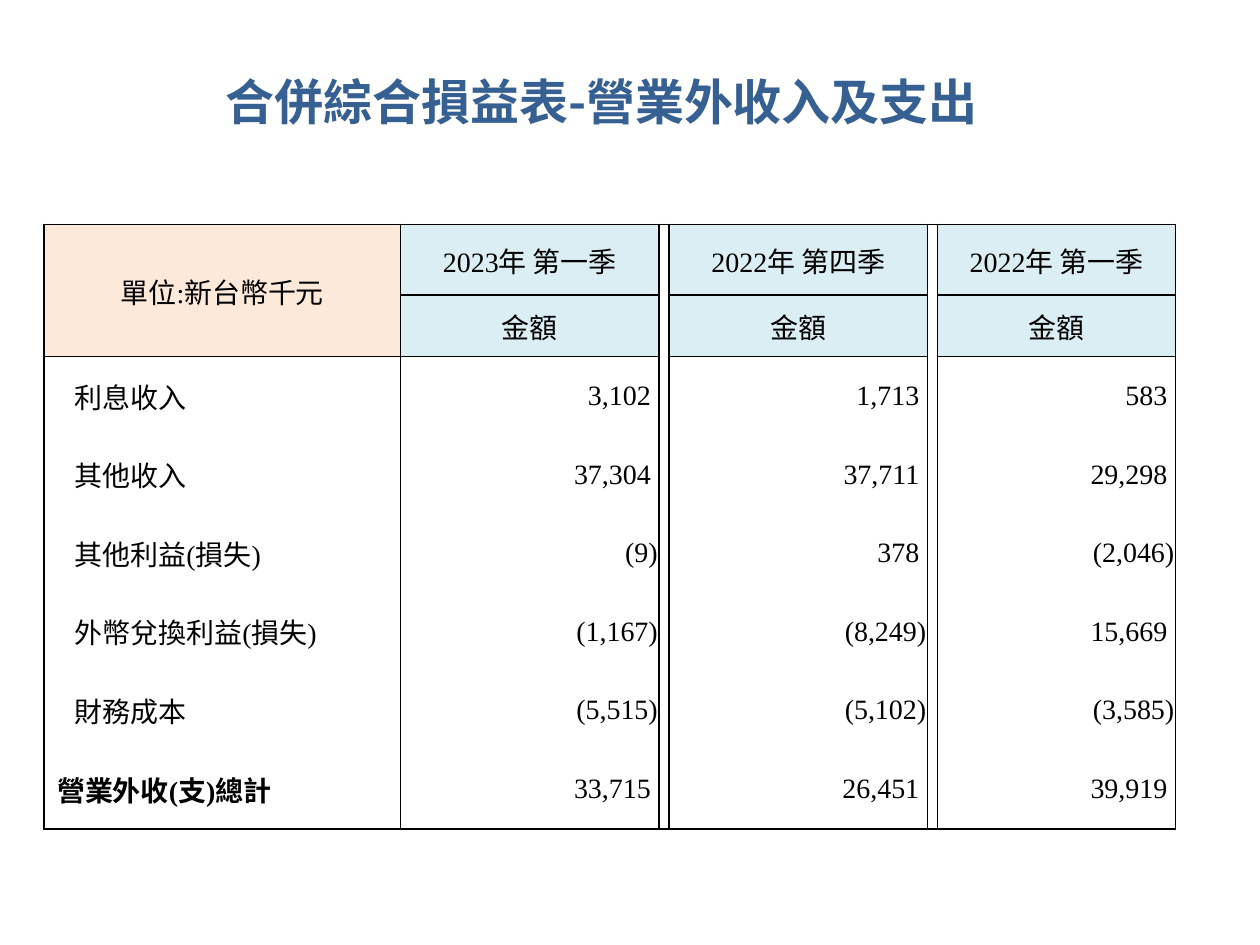
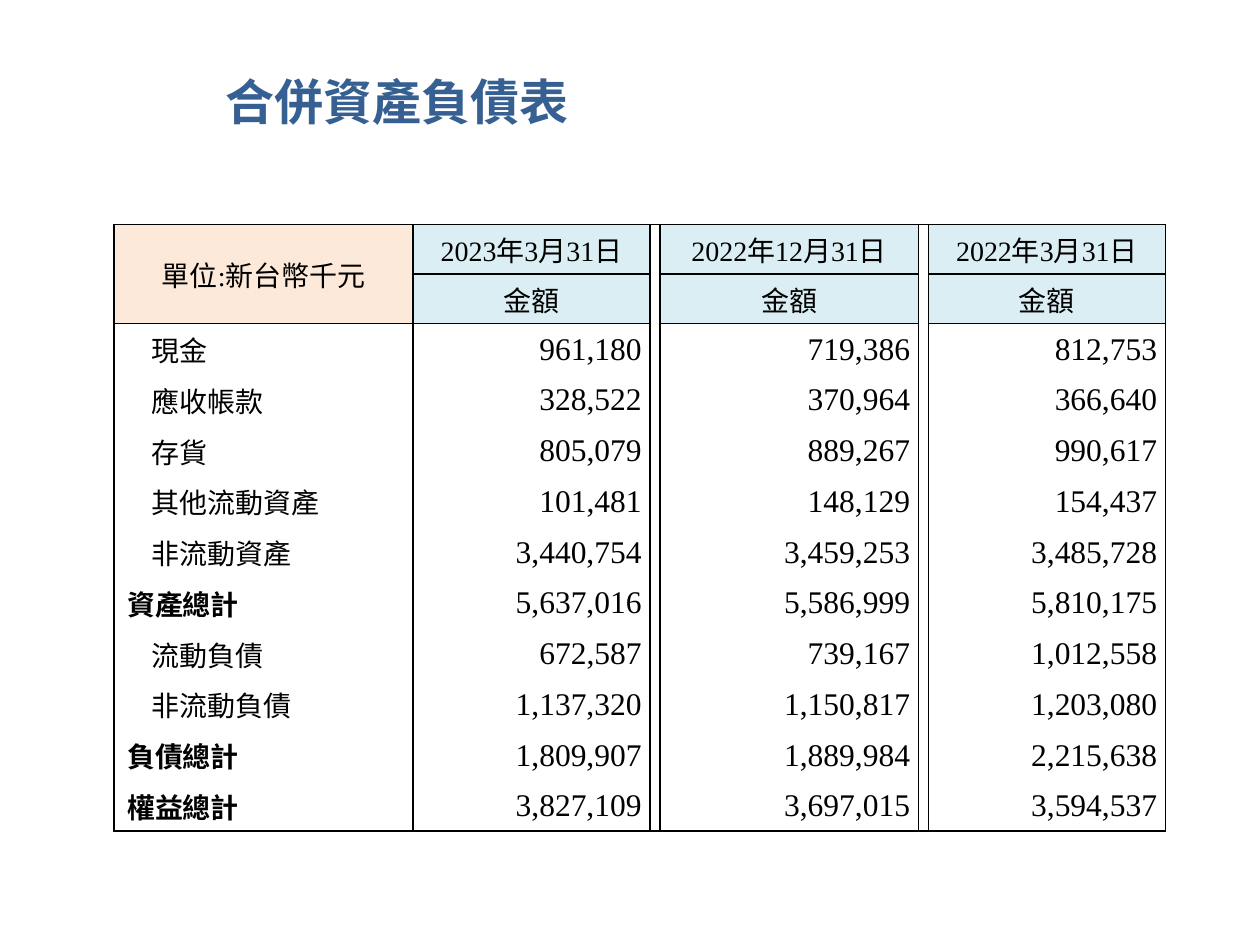
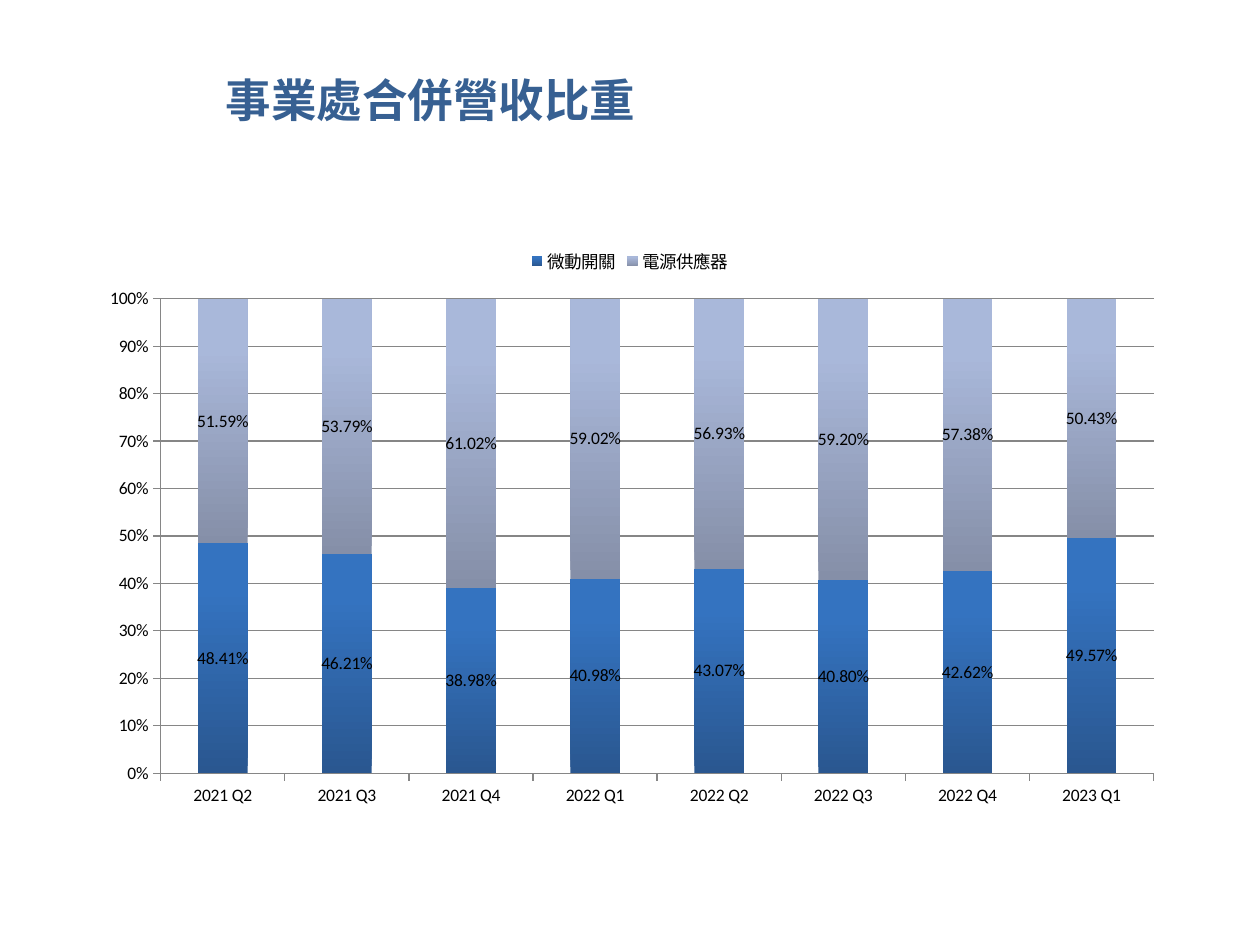
from lxml.etree import SubElement as Sub
from pptx import Presentation
from pptx.chart.data import CategoryChartData as Data
from pptx.dml.color import RGBColor as RGB
from pptx.enum.chart import XL_CHART_TYPE as Kind, XL_LEGEND_POSITION as Spot
from pptx.enum.text import MSO_ANCHOR as Anchor, MSO_AUTO_SIZE as Auto, PP_ALIGN as Align
from pptx.oxml.ns import qn
from pptx.util import Pt

HUES = {
    "title": "376092", "text": "000000", "unit": "FDE9D9", "head": "DBEEF3",
    "grid": "868686",
}
BARS = [("2A5790", "3473C0"), ("858FA8", "A9B8DA")]
CJK = "Noto Sans CJK SC"
SERIF = "Times New Roman"
UNIT = "單位:新台幣千元"
AMOUNT = "金額"
GAP = 5.8
INSET = 0.72
SPACE = 4.72
TOP = 128.2


def put(item, **vals):
    for key, val in vals.items():
        setattr(item, key, val)


class Deck:
    def __init__(self):
        self.prs = Presentation()
        put(self.prs, slide_width=Pt(720), slide_height=Pt(540))
        self.slide = None

    def style(self, font, size, hue="text", bold=False, face=SERIF):
        put(font, size=Pt(size), bold=bold, name=face)
        font.color.rgb = RGB.from_string(HUES[hue])

    def label(self, para, text, size, hue="text", bold=False, face=SERIF):
        run = para.add_run()
        run.text = text
        self.style(run.font, size, hue, bold, face)
        Sub(run.font._element, qn("a:ea"), typeface=CJK)

    def page(self, text, width, height, size=28, face=SERIF):
        self.slide = self.prs.slides.add_slide(self.prs.slide_layouts[5])
        box = self.slide.shapes.title
        put(box, left=Pt(121.7), top=Pt(37.4), width=Pt(width), height=Pt(height))
        put(box.text_frame, word_wrap=True, auto_size=Auto.NONE,
            vertical_anchor=Anchor.TOP)
        para = box.text_frame.paragraphs[0]
        para.alignment = Align.LEFT
        self.label(para, text, size, "title", True, face)

    def edge(self, cell, sides):
        props = cell._tc.get_or_add_tcPr()
        for side in "LRTB":
            line = Sub(props, qn("a:ln" + side), w=str(Pt(1)))
            if side in sides:
                fill = Sub(line, qn("a:solidFill"))
                Sub(fill, qn("a:srgbClr"), val=HUES["text"])
            else:
                Sub(line, qn("a:noFill"))

    def cell(self, cell, text, sides, fill=None, align=Align.CENTER,
             left=INSET, right=INSET, size=16, bold=False):
        self.edge(cell, sides)
        put(cell, margin_left=Pt(left), margin_right=Pt(right),
            margin_top=Pt(INSET), margin_bottom=0, vertical_anchor=Anchor.MIDDLE)
        if fill:
            cell.fill.solid()
            cell.fill.fore_color.rgb = RGB.from_string(HUES[fill])
        else:
            cell.fill.background()
        para = cell.text_frame.paragraphs[0]
        para.alignment = align
        if text:
            self.label(para, text, size, bold=bold)

    def table(self, left, cols, rows, heads, body, indent, size):
        frame = self.slide.shapes.add_table(
            len(rows), len(cols), Pt(left), Pt(TOP), Pt(sum(cols)), Pt(sum(rows)))
        grid = frame.table
        put(grid, first_row=False, horz_banding=False)
        for col, width in zip(grid.columns, cols):
            col.width = Pt(width)
        for row, height in zip(grid.rows, rows):
            row.height = Pt(height)
        grid.cell(0, 0).merge(grid.cell(1, 0))
        last = len(rows) - 1
        for r in range(len(rows)):
            end = "B" if r == last else ""
            for c in (2, 4):
                self.cell(grid.cell(r, c), "", "LR" + ("T" if r == 0 else end))
        for r in (0, 1):
            self.cell(grid.cell(r, 0), "" if r else UNIT, "LRTB", "unit")
            for c, head in zip((1, 3, 5), heads):
                self.cell(grid.cell(r, c), AMOUNT if r else head, "LRTB", "head")
        for r, (name, *nums) in enumerate(body, 2):
            sides = "LR" + ("T" if r == 2 else "") + ("B" if r == last else "")
            total = name.endswith("總計")
            self.cell(grid.cell(r, 0), name, sides, align=Align.LEFT,
                      left=7.5 if total else indent, bold=total)
            for c, num in zip((1, 3, 5), nums):
                self.cell(grid.cell(r, c), num, sides, align=Align.RIGHT, size=size,
                          right=INSET if num.endswith(")") else SPACE)

    def chart(self, cats, sets):
        data = Data(number_format="0.00%")
        data.categories = cats
        for name, vals in sets.items():
            data.add_series(name, vals)
        chart = self.slide.shapes.add_chart(
            Kind.COLUMN_STACKED, Pt(48.2), Pt(133.9), Pt(623.5), Pt(334.8), data).chart
        put(chart, has_title=False, has_legend=True)
        self.style(chart.font, 10, face="Calibri")
        put(chart.legend, position=Spot.TOP, include_in_layout=False)
        plot = chart.plots[0]
        put(plot, overlap=100, gap_width=150, vary_by_categories=False,
            has_data_labels=True)
        put(plot.data_labels, show_value=True, number_format="0.00%",
            number_format_is_linked=False)
        for bar, hues in zip(plot.series, BARS):
            fill = bar.format.fill
            fill.gradient()
            fill.gradient_angle = 90
            for stop, hue, pos in zip(fill.gradient_stops, hues, (0, 0.8)):
                stop.color.rgb = RGB.from_string(hue)
                stop.position = pos
        axis = chart.value_axis
        put(axis, minimum_scale=0, maximum_scale=1, major_unit=0.1,
            has_major_gridlines=True)
        put(axis.tick_labels, number_format="0%", number_format_is_linked=False)
        for item in (axis, axis.major_gridlines, chart.category_axis):
            line = item.format.line
            line.width = Pt(0.75)
            line.color.rgb = RGB.from_string(HUES["grid"])
        self.place(chart, x=0.07, y=0.11, w=0.91, h=0.81)

    def place(self, chart, **parts):
        area = chart._chartSpace.find(".//" + qn("c:plotArea"))
        for old in area.findall(qn("c:layout")):
            area.remove(old)
        layout = Sub(area, qn("c:layout"))
        area.insert(0, layout)
        manual = Sub(layout, qn("c:manualLayout"))
        Sub(manual, qn("c:layoutTarget"), val="inner")
        for key in "xy":
            Sub(manual, qn(f"c:{key}Mode"), val="edge")
        for key, val in parts.items():
            Sub(manual, qn("c:" + key), val=str(val))


def main():
    deck = Deck()

    deck.page("合併綜合損益表-營業外收入及支出", 584, 41, face=CJK)
    deck.table(
        25.2, [203.8, 147.6, GAP, 147.6, GAP, 136], [40.4, 35.2] + [44.8] * 5 + [46],
        ["2023年 第一季", "2022年 第四季", "2022年 第一季"],
        [
            ("利息收入", "3,102", "1,713", "583"),
            ("其他收入", "37,304", "37,711", "29,298"),
            ("其他利益(損失)", "(9)", "378", "(2,046)"),
            ("外幣兌換利益(損失)", "(1,167)", "(8,249)", "15,669"),
            ("財務成本", "(5,515)", "(5,102)", "(3,585)"),
            ("營業外收(支)總計", "33,715", "26,451", "39,919"),
        ], 17.5, 16)

    deck.page("合併資產負債表", 481.7, 65.5)
    deck.table(
        65.2, [170.8, 135.4, GAP, 147.6, GAP, 135.4], [28.3] * 2 + [29] * 10,
        ["2023年3月31日", "2022年12月31日", "2022年3月31日"],
        [
            ("現金", "961,180", "719,386", "812,753"),
            ("應收帳款", "328,522", "370,964", "366,640"),
            ("存貨", "805,079", "889,267", "990,617"),
            ("其他流動資產", "101,481", "148,129", "154,437"),
            ("非流動資產", "3,440,754", "3,459,253", "3,485,728"),
            ("資產總計", "5,637,016", "5,586,999", "5,810,175"),
            ("流動負債", "672,587", "739,167", "1,012,558"),
            ("非流動負債", "1,137,320", "1,150,817", "1,203,080"),
            ("負債總計", "1,809,907", "1,889,984", "2,215,638"),
            ("權益總計", "3,827,109", "3,697,015", "3,594,537"),
        ], 21.5, 18)

    deck.page("事業處合併營收比重", 544.3, 38.9, 26)
    deck.chart(
        ["2021 Q2", "2021 Q3", "2021 Q4", "2022 Q1",
         "2022 Q2", "2022 Q3", "2022 Q4", "2023 Q1"],
        {
            "微動開關": [0.4841, 0.4621, 0.3898, 0.4098, 0.4307, 0.408, 0.4262, 0.4957],
            "電源供應器": [0.5159, 0.5379, 0.6102, 0.5902, 0.5693, 0.592, 0.5738, 0.5043],
        })

    deck.prs.save("out.pptx")


if __name__ == "__main__":
    main()
